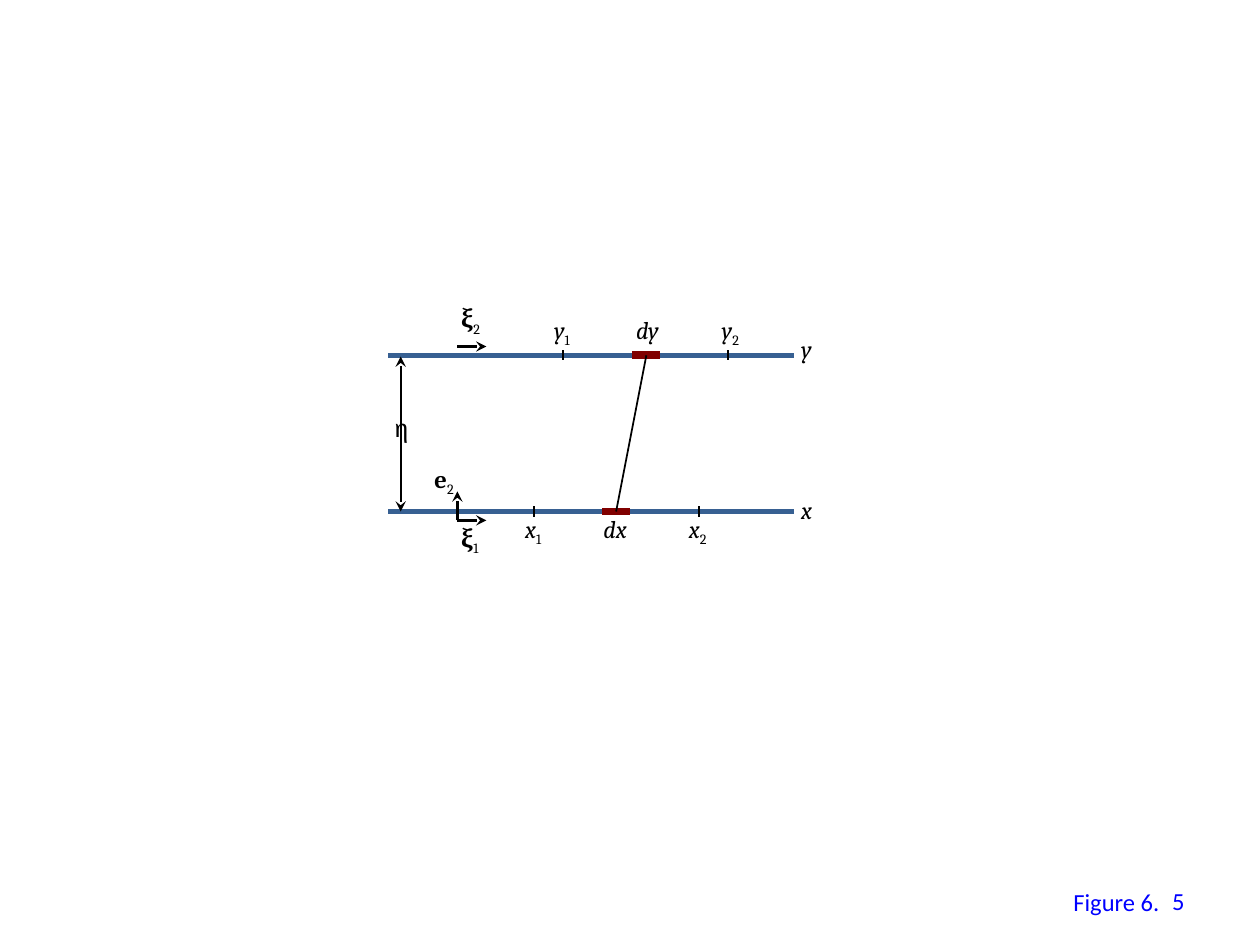
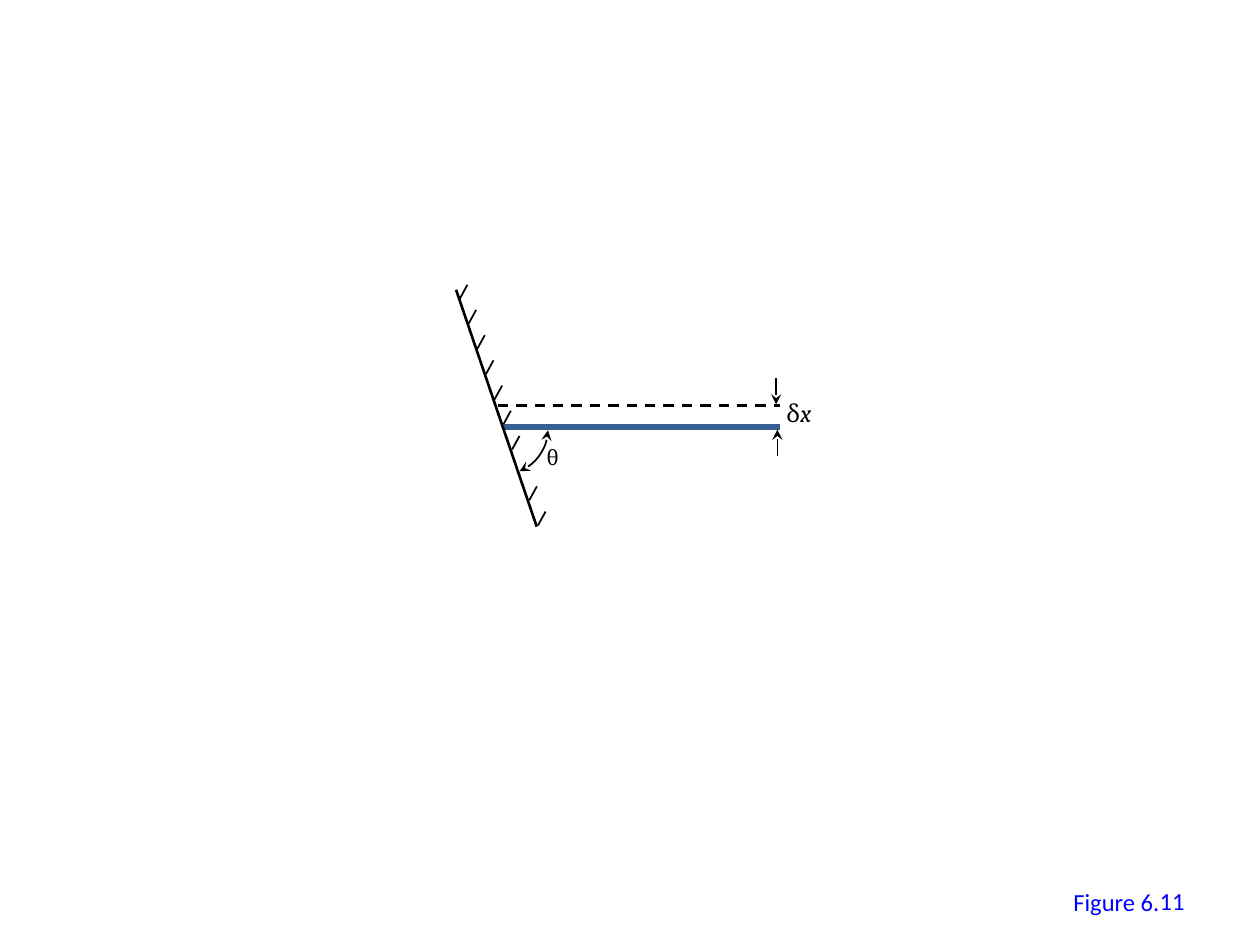
from dataclasses import dataclass

from lxml.etree import SubElement
from pptx import Presentation
from pptx.dml.color import RGBColor
from pptx.enum.dml import MSO_LINE_DASH_STYLE as Dash
from pptx.enum.shapes import MSO_CONNECTOR as Connector, MSO_SHAPE as Shape
from pptx.enum.text import MSO_ANCHOR as Anchor, MSO_AUTO_SIZE as AutoSize, PP_ALIGN as Align
from pptx.oxml.ns import qn
from pptx.util import Inches, Pt


@dataclass(frozen=True)
class Theme:
    ink: RGBColor = RGBColor(0x00, 0x00, 0x00)
    surface: RGBColor = RGBColor(0x37, 0x60, 0x92)
    element: RGBColor = RGBColor(0x80, 0x00, 0x00)
    footer: RGBColor = RGBColor(0x00, 0x00, 0xFF)
    math_font: str = "Cambria"
    footer_font: str = "Calibri"
    text_size: float = 14
    small_size: float = 12
    thin: float = 1
    medium: float = 1.5
    thick: float = 3
    heavy: float = 4.5


THEME = Theme()
FOOTER_STYLE = dict(font=THEME.footer_font, color=THEME.footer)


def style_line(shape, color, weight, ends=(), dash=None):
    shape.line.color.rgb = color
    shape.line.width = Pt(weight)
    if dash:
        shape.line.dash_style = dash
    stroke = shape.line._get_or_add_ln()
    for end in ends:
        SubElement(stroke, qn(f"a:{end}End"), type="stealth")


def add_line(slide, start, finish, color=THEME.ink, weight=THEME.thin, ends=(), dash=None):
    points = [Inches(value) for value in (*start, *finish)]
    line = slide.shapes.add_connector(Connector.STRAIGHT, *points)
    style_line(line, color, weight, ends, dash)
    SubElement(line._element.spPr, qn("a:effectLst"))


def add_arrow(slide, start, finish, weight=THEME.thin):
    add_line(slide, start, finish, weight=weight, ends=("tail",))


def add_run(paragraph, text, style="", size=THEME.text_size,
            font=THEME.math_font, color=THEME.ink):
    run = paragraph.add_run()
    run.text = text
    run.font.name = font
    run.font.size = Pt(size)
    run.font.color.rgb = color
    run.font.bold = style == "bold"
    run.font.italic = style == "italic"
    if style == "subscript":
        run._r.get_or_add_rPr().set("baseline", "-25000")


def add_text_box(slide, left, top, width, height):
    return slide.shapes.add_textbox(Inches(left), Inches(top), Inches(width), Inches(height))


def add_label(slide, left, top, width, *runs, height=0.34, **font):
    label = add_text_box(slide, left, top, width, height)
    frame = label.text_frame
    frame.word_wrap = False
    frame.auto_size = AutoSize.SHAPE_TO_FIT_TEXT
    for text, style in runs:
        add_run(frame.paragraphs[0], text, style, **font)
    return label


def add_master_caption(deck, slide):
    caption = add_label(slide, 8.42, 6.99, 0.89, ("Figure 6.", ""), **FOOTER_STYLE)
    deck.slide_master.element.cSld.spTree.append(caption.element)


def add_figure_number(slide, number):
    frame = add_text_box(slide, 7.17, 6.95, 2.33, 0.4).text_frame
    frame.word_wrap = True
    frame.vertical_anchor = Anchor.MIDDLE
    frame.paragraphs[0].alignment = Align.RIGHT
    add_run(frame.paragraphs[0], str(number), **FOOTER_STYLE)


def add_surface(slide, axis, y, ticks, element_left, element_label_left, label_top, axis_top):
    add_line(slide, (6.3, y), (3.08, y), THEME.surface, THEME.thick)
    for index, (x, label_left) in enumerate(ticks, start=1):
        add_line(slide, (x, y - 0.04), (x, y + 0.04))
        add_label(slide, label_left, label_top, 0.4, (axis, "italic"), (str(index), "subscript"))
    add_line(slide, (element_left + 0.22, y), (element_left, y), THEME.element, THEME.heavy)
    add_label(slide, element_label_left, label_top, 0.44, ("d" + axis, "italic"))
    add_label(slide, 6.26, axis_top, 0.34, (axis, "italic"))


def add_unit_vector(slide, start, finish, label_box, symbol, index):
    add_arrow(slide, start, finish, THEME.medium)
    add_label(slide, *label_box, (symbol, "bold"), (index, "subscript"))


def add_arc(slide, left, top, size, start, finish):
    arc = slide.shapes.add_shape(Shape.ARC, Inches(left), Inches(top), Inches(size), Inches(size))
    arc.shadow.inherit = False
    arc.fill.background()
    arc.adjustments[0], arc.adjustments[1] = start, finish
    style_line(arc, THEME.ink, THEME.thin, ("head", "tail"))


def add_wall(slide):
    add_line(slide, (3.62, 2.3), (4.26, 4.18), weight=THEME.medium)
    for step in (0, 1, 2, 3, 4, 5, 6, 8, 9):
        x, y = 3.65 + 0.62 * step / 9, 2.37 + 0.2 * step
        add_line(slide, (x, y), (x + 0.06, y - 0.11))


def draw_parallel_surfaces(slide):
    upper, lower, origin = 2.82, 4.06, 3.63
    add_surface(slide, "x", lower, ((4.24, 4.07), (5.55, 5.37)), 4.78, 4.69, 4.03, 3.88)
    add_surface(slide, "y", upper, ((4.47, 4.3), (5.78, 5.63)), 5.02, 4.95, 2.45, 2.6)
    add_line(slide, (5.13, upper), (4.89, lower))
    add_unit_vector(slide, (origin, 2.75), (3.86, 2.75), (3.56, 2.36, 0.37), "ξ", "2")
    add_unit_vector(slide, (origin, 4.13), (3.86, 4.13), (3.56, 4.1, 0.37), "ξ", "1")
    add_unit_vector(slide, (origin, 4.13), (origin, 3.9), (3.35, 3.63, 0.36), "e", "2")
    add_line(slide, (3.18, 2.83), (3.18, lower), ends=("head", "tail"))
    add_label(slide, 3.03, 3.23, 0.31, ("η", ""))


def draw_inclined_wall(slide):
    plate, displaced, right = 3.39, 3.22, 6.19
    add_line(slide, (4, plate), (right, plate), THEME.surface, THEME.thick)
    add_arrow(slide, (6.17, 3.62), (6.17, 3.41))
    add_arrow(slide, (6.16, 3), (6.16, 3.21))
    add_label(slide, 6.14, 3.11, 0.44, ("δ", ""), ("x", "italic"))
    add_wall(slide)
    add_line(slide, (3.95, displaced), (right, displaced), weight=THEME.medium, dash=Dash.DASH)
    add_arc(slide, 3.61, 3.03, 0.74, 1.4, 40.21)
    add_label(slide, 4.24, 3.48, 0.33, ("θ", ""), height=0.3, size=THEME.small_size)


def main():
    deck = Presentation()
    deck.slide_width, deck.slide_height = Inches(10), Inches(7.5)
    blank = deck.slide_layouts[6]
    figures = {5: draw_parallel_surfaces, 11: draw_inclined_wall}
    for number, draw in figures.items():
        slide = deck.slides.add_slide(blank)
        draw(slide)
        add_figure_number(slide, number)
    add_master_caption(deck, deck.slides[0])
    deck.save("out.pptx")


if __name__ == "__main__":
    main()
